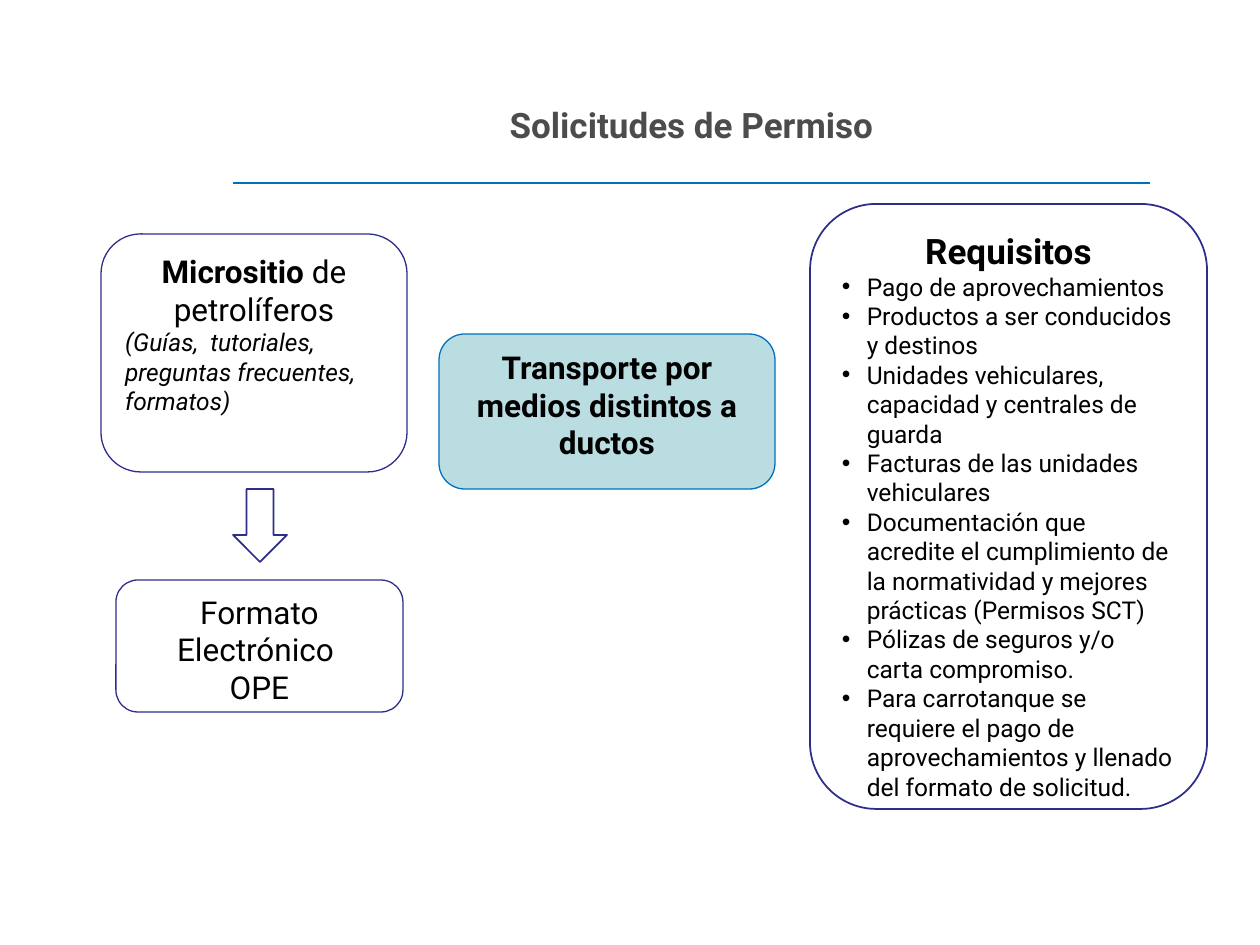
"""Builds the slide on permit applications for transport by means other than pipelines."""
from dataclasses import dataclass

from lxml import etree
from pptx import Presentation
from pptx.dml.color import RGBColor
from pptx.enum.shapes import MSO_CONNECTOR, MSO_SHAPE
from pptx.enum.text import MSO_ANCHOR, PP_ALIGN
from pptx.oxml.ns import qn
from pptx.util import Emu, Pt

ROUNDED, DOWN_ARROW = MSO_SHAPE.ROUNDED_RECTANGLE, MSO_SHAPE.DOWN_ARROW
STRAIGHT = MSO_CONNECTOR.STRAIGHT
LEFT, CENTER = PP_ALIGN.LEFT, PP_ALIGN.CENTER
TOP, MIDDLE = MSO_ANCHOR.TOP, MSO_ANCHOR.MIDDLE


@dataclass(frozen=True)
class Theme:
    font: str = "Roboto"
    title: str = "4C4C4C"
    text: str = "000000"
    paper: str = "FFFFFF"
    topic: str = "BADDE1"
    accent: str = "0070C0"
    outline: str = "2D2D8A"
    heading_size: int = 20
    label_size: int = 18
    body_size: int = 14


THEME = Theme()
PX_PER_INCH = 126
BULLET_INDENT = 25
REQUIREMENTS = [
    "Pago de aprovechamientos",
    "Productos a ser conducidos y destinos",
    "Unidades vehiculares, capacidad y centrales de guarda",
    "Facturas de las unidades vehiculares",
    "Documentación que acredite el cumplimiento de la normatividad y mejores prácticas (Permisos SCT)",
    "Pólizas de seguros y/o carta compromiso.",
    "Para carrotanque se requiere el pago de aprovechamientos y llenado del formato de solicitud.",
]


def px(n):
    return Emu(round(n * 914400 / PX_PER_INCH))


def rgb(color):
    return RGBColor.from_string(color)


def add_run(p, text, size, color=THEME.text, bold=False, italic=False):
    r = p.add_run()
    r.text = text
    r.font.name = THEME.font
    r.font.size = Pt(size)
    r.font.bold = bold
    r.font.italic = italic
    r.font.color.rgb = rgb(color)


def add_bullet(p):
    pPr = p._p.get_or_add_pPr()
    pPr.set("marL", str(px(BULLET_INDENT)))
    pPr.set("indent", str(-px(BULLET_INDENT)))
    etree.SubElement(pPr, qn("a:buFont")).set("typeface", "Arial")
    etree.SubElement(pPr, qn("a:buChar")).set("char", "•")


def next_paragraph(tf, align=CENTER):
    first = tf.paragraphs[0]
    p = tf.add_paragraph() if first.runs else first
    p.alignment = align
    return p


def add_title(s, text, box):
    sp = s.shapes.title
    sp.left, sp.top, sp.width, sp.height = map(px, box)
    tf = sp.text_frame
    tf.vertical_anchor = MIDDLE
    add_run(next_paragraph(tf), text, THEME.heading_size, THEME.title, bold=True)


def add_rule(s, left, right, y):
    line = s.shapes.add_connector(STRAIGHT, px(left), px(y), px(right), px(y))
    line.line.color.rgb = rgb(THEME.accent)
    line.line.width = Pt(1.5)
    etree.SubElement(line._element.spPr, qn("a:effectLst"))


def add_panel(s, box, kind=ROUNDED, fill=THEME.paper, line=THEME.outline, weight=0.75):
    sp = s.shapes.add_shape(kind, *map(px, box))
    sp.shadow.inherit = False
    sp.fill.solid()
    sp.fill.fore_color.rgb = rgb(fill)
    sp.line.color.rgb = rgb(line)
    sp.line.width = Pt(weight)
    tf = sp.text_frame
    tf.word_wrap = True
    tf.vertical_anchor = TOP
    return tf


def add_topic(s):
    tf = add_panel(s, (439, 334, 336, 155), fill=THEME.topic, line=THEME.accent)
    add_run(next_paragraph(tf), "Transporte por medios distintos a ductos", THEME.label_size, bold=True)


def add_microsite(s):
    tf = add_panel(s, (101, 234, 306, 238))
    p = next_paragraph(tf)
    add_run(p, "Micrositio ", THEME.label_size, bold=True)
    add_run(p, "de petrolíferos", THEME.label_size)
    add_run(next_paragraph(tf, LEFT), "(Guías,  tutoriales, preguntas frecuentes, formatos)",
            THEME.body_size, italic=True)


def add_form(s):
    tf = add_panel(s, (116, 580, 287, 132))
    for text in ("Formato Electrónico ", "OPE"):
        add_run(next_paragraph(tf), text, THEME.label_size)


def add_requirements(s):
    tf = add_panel(s, (810, 204, 397, 605), weight=1)
    add_run(next_paragraph(tf), "Requisitos", THEME.heading_size, bold=True)
    for text in REQUIREMENTS:
        p = next_paragraph(tf, LEFT)
        add_bullet(p)
        add_run(p, text, THEME.body_size)


def main():
    prs = Presentation()
    prs.slide_width, prs.slide_height = px(1260), px(945)
    s = prs.slides.add_slide(prs.slide_layouts[5])
    add_title(s, "Solicitudes de Permiso", (233, 45, 917, 158))
    add_topic(s)
    add_microsite(s)
    add_panel(s, (233, 489, 54, 73), kind=DOWN_ARROW, weight=1)
    add_form(s)
    add_rule(s, 233, 1150, 183)
    add_requirements(s)
    prs.save("out.pptx")


if __name__ == "__main__":
    main()
